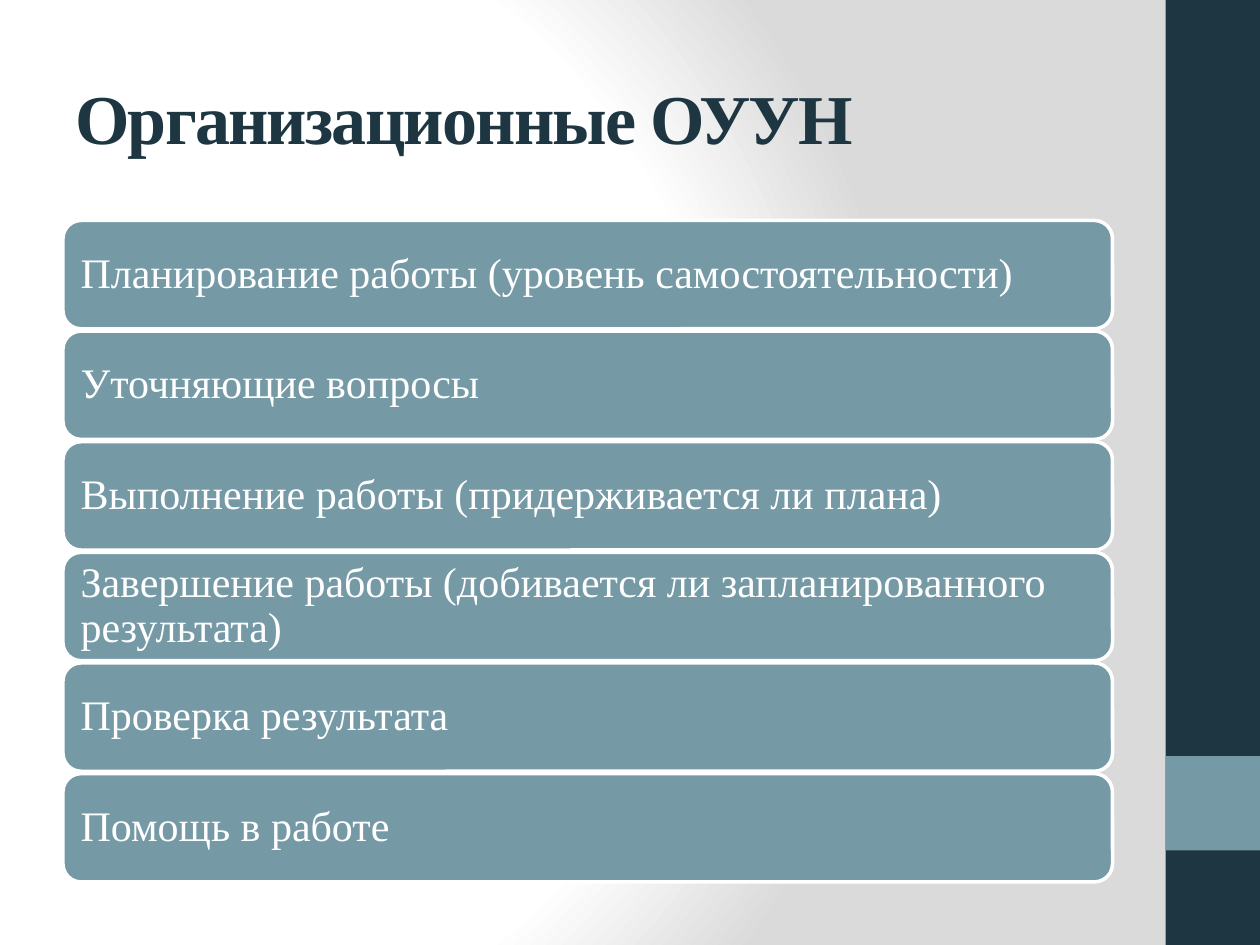
from lxml.etree import fromstring
from pptx import Presentation
from pptx.dml.color import RGBColor
from pptx.enum.shapes import MSO_SHAPE as Shape
from pptx.enum.text import MSO_ANCHOR as Anchor, PP_ALIGN as Align
from pptx.oxml.ns import qn
from pptx.util import Inches, Pt

COLORS = {"dark": "1D3641", "teal": "759AA5", "white": "FFFFFF", "grey": "DADADA"}
FONT = "Times New Roman"
STEPS = [
    "Планирование работы (уровень самостоятельности)",
    "Уточняющие вопросы",
    "Выполнение работы (придерживается ли плана)",
    "Завершение работы (добивается ли запланированного результата)",
    "Проверка результата",
    "Помощь в работе",
]


def add_block(kind, left, top, width, height, color):
    block = slide.shapes.add_shape(
        kind, Inches(left), Inches(top), Inches(width), Inches(height))
    block.shadow.inherit = False
    block.fill.solid()
    block.fill.fore_color.rgb = RGBColor.from_string(COLORS[color])
    block.line.fill.background()
    return block


def write(frame, text, color, **font_format):
    frame.word_wrap = True
    frame.vertical_anchor = Anchor.MIDDLE
    paragraph = frame.paragraphs[0]
    paragraph.alignment = Align.LEFT
    run = paragraph.add_run()
    run.text = text
    run.font.color.rgb = RGBColor.from_string(COLORS[color])
    for name, value in {"name": FONT, **font_format}.items():
        setattr(run.font, name, value)
    return run


prs = Presentation()
prs.slide_width, prs.slide_height = Inches(10), Inches(7.5)
slide = prs.slides.add_slide(prs.slide_layouts[6])

# Background: radial gradient from white to grey
slide.background.fill.gradient()
linear = slide.element.find(".//" + qn("a:gradFill"))
stops = "".join(
    f'<a:gs pos="{percent * 1000}"><a:srgbClr val="{COLORS[color]}"/></a:gs>'
    for percent, color in [(0, "white"), (75, "white"), (100, "grey")])
radial = fromstring(
    '<a:gradFill xmlns:a="http://schemas.openxmlformats.org/drawingml/2006/main"'
    f' rotWithShape="1"><a:gsLst>{stops}</a:gsLst><a:path path="circle">'
    '<a:fillToRect l="20000" t="50000" r="100000" b="50000"/></a:path></a:gradFill>')
linear.getparent().replace(linear, radial)

# Side band with its accent square
add_block(Shape.RECTANGLE, 9.25, 0, 0.75, 7.5, "dark")
add_block(Shape.RECTANGLE, 9.25, 6, 0.75, 0.75, "teal")

# Title
title = slide.shapes.add_textbox(Inches(0.5), Inches(0.3), Inches(8.33), Inches(1.25))
heading = write(title.text_frame, "Организационные ОУУН", "dark", size=Pt(40), bold=True)
heading.font._element.set("spc", "-100")

# Stacked bars, evenly spaced from top to bottom
first_top, last_top, bar_height = 1.75, 6.14, 0.86
pitch = (last_top - first_top) / (len(STEPS) - 1)
for row, step in enumerate(STEPS):
    bar = add_block(Shape.ROUNDED_RECTANGLE, 0.5, first_top + row * pitch,
                    8.33, bar_height, "teal")
    bar.line.color.rgb = RGBColor.from_string(COLORS["white"])
    bar.line.width = Pt(2)
    frame = bar.text_frame
    for side in ("left", "top", "right", "bottom"):
        setattr(frame, f"margin_{side}", Inches(0.1))
    write(frame, step, "white", size=Pt(24))
    frame.paragraphs[0].line_spacing = 0.9

prs.save("out.pptx")
